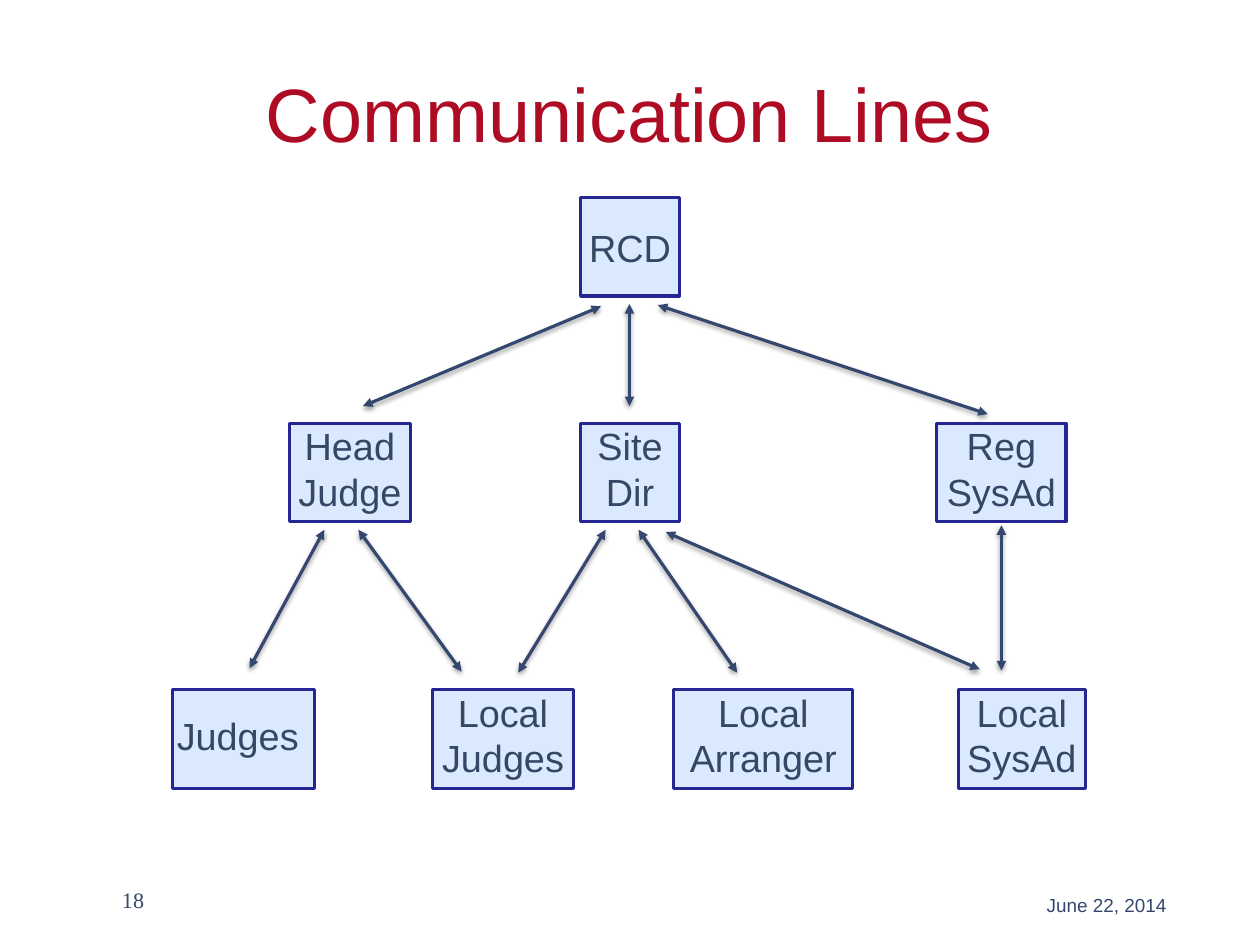
import pptx
import pptx.dml.color
import pptx.enum.shapes
import pptx.enum.text
import pptx.oxml
import pptx.oxml.ns
import pptx.util

Inches = pptx.util.Inches
Pt = pptx.util.Pt
RGBColor = pptx.dml.color.RGBColor
PP_ALIGN = pptx.enum.text.PP_ALIGN
MSO_ANCHOR = pptx.enum.text.MSO_ANCHOR

CRIMSON = RGBColor(0xAE, 0x0C, 0x25)
NAVY = RGBColor(0x34, 0x47, 0x6E)
SLATE = RGBColor(0x34, 0x47, 0x64)
PALE_BLUE = RGBColor(0xDB, 0xE9, 0xFF)
BORDER_BLUE = RGBColor(0x25, 0x25, 0x94)

BOX_HEIGHT = 0.87
LINE_HEIGHT = 0.385
ROWS = [
    (1.74, [(5.12, 0.87, ["RCD"])]),
    (3.73, [
        (2.55, 1.07, ["Head", "Judge"]),
        (5.12, 0.87, ["Site", "Dir"]),
        (8.26, 1.14, ["Reg", "SysAd"]),
    ]),
    (6.08, [
        (1.52, 1.25, ["Judges"]),
        (3.81, 1.25, ["Local", "Judges"]),
        (5.94, 1.58, ["Local", "Arranger"]),
        (8.45, 1.12, ["Local", "SysAd"]),
    ]),
]
SINGLE_LINE_TOP = {"RCD": 0.24, "Judges": 0.2}
SINGLE_LINE_RIGHT = {"RCD": 0, "Judges": 0.1}

ARROWS = [
    ((3.2, 3.58), (5.3, 2.7)),
    ((5.55, 3.58), (5.55, 2.68)),
    ((8.71, 3.65), (5.8, 2.69)),
    ((8.83, 5.91), (8.83, 4.63)),
    ((8.64, 5.9), (5.87, 4.69)),
    ((6.5, 5.93), (5.63, 4.67)),
    ((4.57, 5.93), (5.34, 4.67)),
    ((2.86, 4.67), (2.2, 5.89)),
    ((3.16, 4.67), (4.07, 5.92)),
]
ARROW_SHADOW = (
    f'<a:effectLst {pptx.oxml.ns.nsdecls("a")}>'
    f'<a:outerShdw blurRad="{Pt(3)}" dist="{Pt(1.6)}" dir="5400000" rotWithShape="0">'
    '<a:srgbClr val="000000"><a:alpha val="38000"/></a:srgbClr>'
    '</a:outerShdw></a:effectLst>'
)


def write_lines(frame, lines, size, color, align, font="Arial", margins=(0, 0, 0, 0)):
    frame.margin_left, frame.margin_top, frame.margin_right, frame.margin_bottom = map(Inches, margins)
    for index, line in enumerate(lines):
        paragraph = frame.add_paragraph() if index else frame.paragraphs[0]
        paragraph.alignment = align
        run = paragraph.add_run()
        run.text = line
        run.font.size = Pt(size)
        run.font.name = font
        run.font.color.rgb = color


def add_text(slide, place, text, size, color, align, wrap=True, **options):
    frame = slide.shapes.add_textbox(*map(Inches, place)).text_frame
    frame.word_wrap = wrap
    write_lines(frame, [text], size, color, align, **options)
    return frame


def add_role(slide, left, top, width, lines):
    shape = slide.shapes.add_shape(
        pptx.enum.shapes.MSO_SHAPE.RECTANGLE,
        Inches(left), Inches(top), Inches(width), Inches(BOX_HEIGHT))
    shape.shadow.inherit = False
    shape.fill.solid()
    shape.fill.fore_color.rgb = PALE_BLUE
    shape.line.color.rgb = BORDER_BLUE
    shape.line.width = Pt(2)
    shape.text_frame.word_wrap = False
    shape.text_frame.vertical_anchor = MSO_ANCHOR.TOP
    margins = (0, SINGLE_LINE_TOP.get(lines[0], 0), SINGLE_LINE_RIGHT.get(lines[0], 0), 0)
    write_lines(shape.text_frame, lines, 24, SLATE, PP_ALIGN.CENTER, margins=margins)


def add_arrow(slide, start, end):
    arrow = slide.shapes.add_connector(
        pptx.enum.shapes.MSO_CONNECTOR.STRAIGHT, *map(Inches, start + end))
    arrow.line.color.rgb = NAVY
    arrow.line.width = Pt(2)
    line = arrow.line._get_or_add_ln()
    for tag in ("headEnd", "tailEnd"):
        line.append(pptx.oxml.parse_xml(
            f'<a:{tag} {pptx.oxml.ns.nsdecls("a")} type="triangle"/>'))
    arrow._element.spPr.append(pptx.oxml.parse_xml(ARROW_SHADOW))


def main():
    presentation = pptx.Presentation()
    presentation.slide_width = Inches(11.11)
    presentation.slide_height = Inches(8.33)
    slide = presentation.slides.add_slide(presentation.slide_layouts[6])

    add_text(slide, (9.18, 7.83, 1.17, 0.29), "June 22, 2014", 12, NAVY,
             PP_ALIGN.LEFT, wrap=False, margins=(0.05,) * 4)
    add_text(slide, (0.79, 7.81, 0.48, 0.31), "18", 14, NAVY,
             PP_ALIGN.RIGHT, font="Times New Roman")
    title = add_text(slide, (0.6, 0.39, 9.9, 1.28), "Communication Lines", 48,
                     CRIMSON, PP_ALIGN.CENTER)
    title.vertical_anchor = MSO_ANCHOR.MIDDLE
    title.paragraphs[0].line_spacing = 0.95

    for top, roles in ROWS:
        for left, width, lines in roles:
            add_role(slide, left, top, width, lines)
    for start, end in ARROWS:
        add_arrow(slide, start, end)

    presentation.save("out.pptx")


if __name__ == "__main__":
    main()
